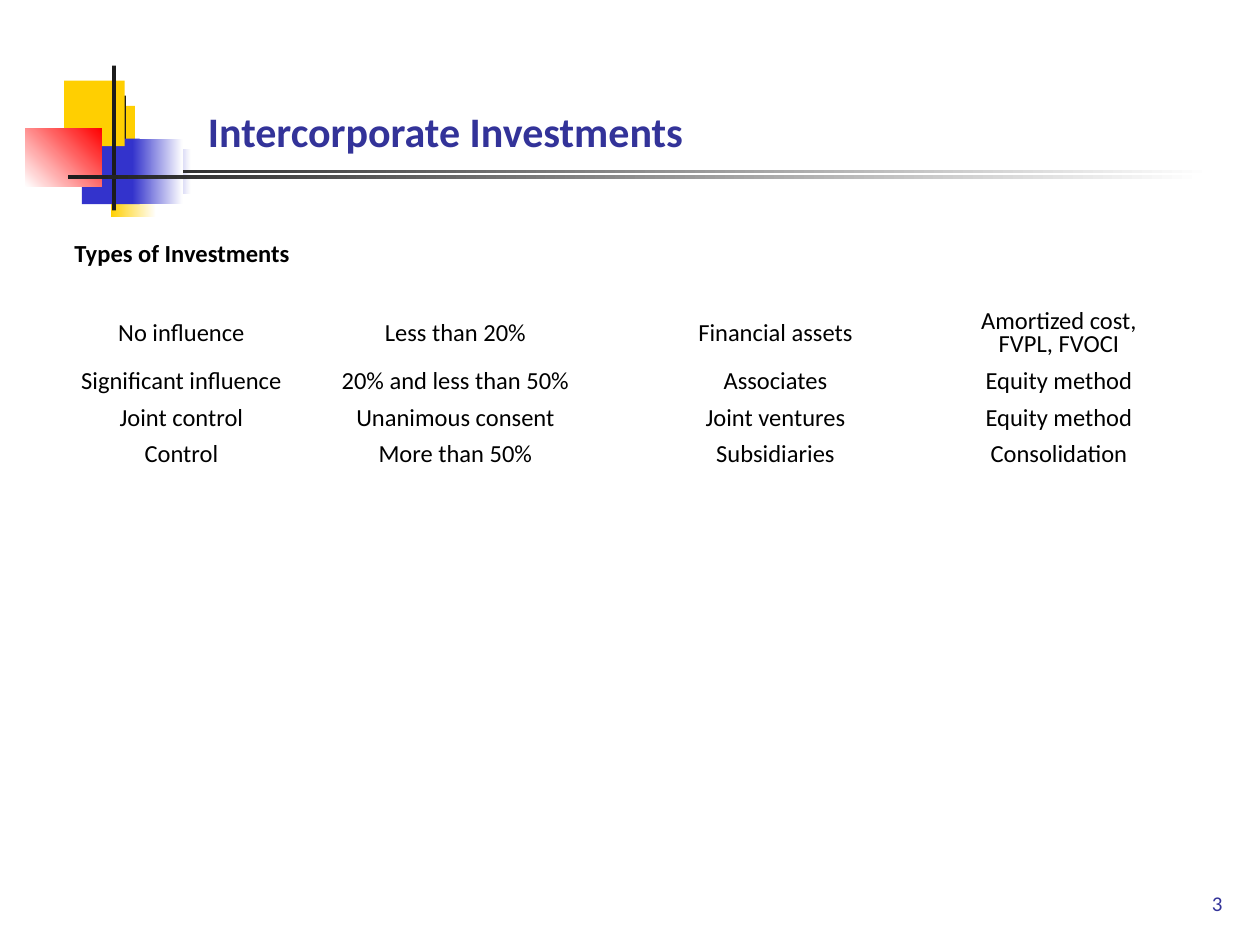
from dataclasses import dataclass

from pptx import Presentation
from pptx.dml.color import RGBColor
from pptx.enum.shapes import MSO_SHAPE
from pptx.enum.text import MSO_ANCHOR, PP_ALIGN
from pptx.oxml.ns import qn
from pptx.util import Inches, Pt

RECTANGLE = MSO_SHAPE.RECTANGLE
LEFT, CENTER, RIGHT = PP_ALIGN.LEFT, PP_ALIGN.CENTER, PP_ALIGN.RIGHT
MIDDLE, BOTTOM, TOP = MSO_ANCHOR.MIDDLE, MSO_ANCHOR.BOTTOM, MSO_ANCHOR.TOP


@dataclass(frozen=True)
class Theme:
    font: str = "Calibri"
    title_size: int = 24
    body_size: int = 14
    number_size: int = 12
    heading: str = "333399"
    text: str = "000000"
    yellow: str = "FFCF01"
    blue: str = "3333CC"
    red: str = "FF0000"
    dark: str = "1C1C1C"
    white: str = "FFFFFF"


class SlideBuilder:
    """Holds the theme and the slide being filled."""

    def __init__(self, page, theme):
        self.page = page
        self.theme = theme

    def place(self, box, area):
        for name, length in zip(("left", "top", "width", "height"), area):
            setattr(box, name, Inches(length))

    def set_text(self, frame, text, size, color, bold=False, align=LEFT,
                 anchor=TOP, line_spacing=None):
        frame.word_wrap = True
        frame.vertical_anchor = anchor
        para = frame.paragraphs[0]
        para.text = text
        para.alignment = align
        para.space_before = Pt(0)
        para.line_spacing = line_spacing
        style = {"name": self.theme.font, "size": Pt(size), "bold": bold}
        font = para.runs[0].font
        for name, value in style.items():
            setattr(font, name, value)
        font.color.rgb = RGBColor.from_string(color)
        return para

    def title(self, text, area):
        box = self.page.shapes.title
        self.place(box, area)
        self.set_text(box.text_frame, text, self.theme.title_size,
                      self.theme.heading, bold=True, anchor=BOTTOM)

    def body(self, text, area):
        box = self.page.placeholders[1]
        self.place(box, area)
        para = self.set_text(box.text_frame, text, self.theme.body_size,
                             self.theme.text, bold=True, line_spacing=0.8)
        properties = para._p.get_or_add_pPr()
        properties.set("marL", str(Inches(0.39)))
        properties.set("indent", str(-Inches(0.39)))
        properties.append(properties.makeelement(qn("a:buNone"), {}))

    def page_number(self, text, area):
        box = self.page.shapes.add_textbox(*map(Inches, area))
        self.set_text(box.text_frame, text, self.theme.number_size,
                      self.theme.heading, align=RIGHT, anchor=BOTTOM)

    def rectangle(self, shapes, area, colors, angle=0):
        """One colour gives a solid fill, two give a gradient."""
        box = shapes.add_shape(RECTANGLE, *map(Inches, area))
        box.shadow.inherit = False
        box.line.fill.background()
        if len(colors) == 1:
            box.fill.solid()
            box.fill.fore_color.rgb = RGBColor.from_string(colors[0])
            return
        box.fill.gradient()
        box.fill.gradient_angle = angle
        for stop, color, position in zip(box.fill.gradient_stops, colors, (0, 1)):
            stop.color.rgb = RGBColor.from_string(color)
            stop.position = position

    def ornament(self, areas):
        """Groups the overlapping blocks, upright bar and title rule."""
        theme = self.theme
        fills = (
            ((theme.blue,), 0),
            ((theme.yellow,), 0),
            ((theme.blue, theme.white), 0),
            ((theme.white, theme.red), 45),
            ((theme.dark,), 0),
            ((theme.dark, theme.white), 0),
        )
        group = self.page.shapes.add_group_shape()
        for area, (colors, angle) in zip(areas, fills):
            self.rectangle(group.shapes, area, colors, angle)

    def table(self, rows, area, widths, heights):
        table = self.page.shapes.add_table(
            len(rows), len(widths), *map(Inches, area)).table
        table.first_row = table.horz_banding = False
        for column, width in zip(table.columns, widths):
            column.width = Inches(width)
        for row, height, texts in zip(table.rows, heights, rows):
            row.height = Inches(height)
            for cell, text in zip(row.cells, texts):
                cell.fill.background()
                cell.vertical_anchor = MIDDLE
                self.set_text(cell.text_frame, text, self.theme.body_size,
                              self.theme.text, align=CENTER, anchor=None,
                              line_spacing=0.8)


BACK_BLOCKS = (
    (0.73, 1.15, 0.46, 0.35),
    (0.59, 0.84, 0.48, 0.35),
    (1.12, 1.18, 0.4, 0.36),
    (0.27, 1.1, 0.61, 0.32),
    (0.97, 0.76, 0.03, 0.79),
    (0.62, 1.35, 9, 0.02),
)
FRONT_BLOCKS = (
    (0.65, 1.1, 0.46, 0.52),
    (0.51, 0.64, 0.48, 0.52),
    (1.05, 1.1, 0.4, 0.52),
    (0.2, 1.02, 0.61, 0.46),
    (0.89, 0.52, 0.03, 1.15),
    (0.54, 1.39, 9, 0.03),
)
INVESTMENTS = (
    ("No influence", "Less than 20%", "Financial assets",
     "Amortized cost, FVPL, FVOCI"),
    ("Significant influence", "20% and less than 50%", "Associates",
     "Equity method"),
    ("Joint control", "Unanimous consent", "Joint ventures", "Equity method"),
    ("Control", "More than 50%", "Subsidiaries", "Consolidation"),
)


def main():
    deck = Presentation()
    deck.slide_width, deck.slide_height = Inches(10), Inches(7.5)
    theme = Theme()
    builder = SlideBuilder(deck.slides.add_slide(deck.slide_layouts[1]), theme)

    builder.rectangle(builder.page.shapes, (0.88, 1.2, 0.36, 0.52),
                      (theme.yellow, theme.white))
    for blocks in (BACK_BLOCKS, FRONT_BLOCKS):
        builder.ornament(blocks)
    builder.title("Intercorporate Investments", (1.55, 0.75, 5.97, 0.54))
    builder.body("Types of Investments", (0.49, 1.88, 8.71, 5.32))
    builder.page_number("3", (7.52, 6.82, 2.28, 0.5))
    builder.table(INVESTMENTS, (0.47, 2.41, 8.85, 1.35),
                  widths=(1.94, 2.41, 2.67, 1.83),
                  heights=(0.48, 0.29, 0.29, 0.29))
    deck.save("out.pptx")


if __name__ == "__main__":
    main()
